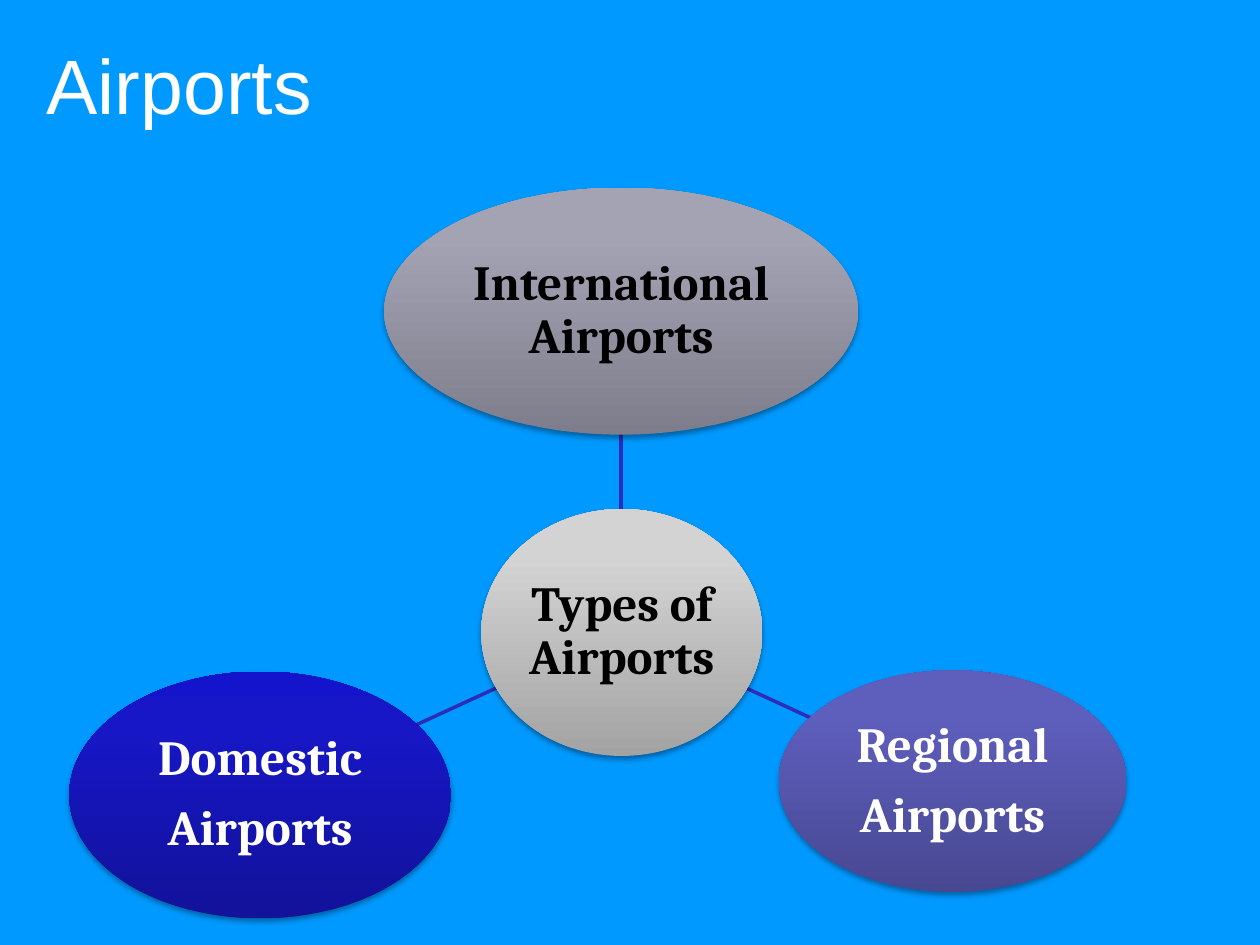
from copy import deepcopy

from lxml.etree import SubElement
from pptx import Presentation
from pptx.dml.color import RGBColor
from pptx.enum.shapes import MSO_CONNECTOR, MSO_SHAPE
from pptx.enum.text import MSO_ANCHOR, PP_ALIGN
from pptx.oxml.ns import qn
from pptx.util import Inches, Pt

THEME = {
    "background": "0099FF",
    "line": "2D2DB9",
    "shadow": "000000",
    "light": "FFFFFF",
    "dark": "000000",
    "title_font": "Arial",
    "label_font": "Cambria",
    "title_size": 44,
    "label_size": 28,
    "line_width": 2,
}
TITLE = "Airports"
GRADIENT_POSITIONS = (0, 0.8, 1)
NODES = [
    {"label": "Types of Airports", "box": (3.82, 4.04, 2.23, 1.96),
     "stops": ("A3A3A3", "D3D3D3", "D4D4D4"), "text": "dark"},
    {"label": "International Airports", "box": (3.05, 1.49, 3.76, 1.96),
     "stops": ("7D7D8B", "A3A3B4", "A3A3B6"), "text": "dark"},
    {"label": "Regional\nAirports", "box": (6.18, 5.32, 2.76, 1.76),
     "stops": ("484892", "5E5EBD", "5C5CC0"), "text": "light"},
    {"label": "Domestic\nAirports", "box": (0.55, 5.33, 3.03, 1.96),
     "stops": ("12129A", "1717C8", "1414CC"), "text": "light"},
]
SPOKES = [
    (4.93, 4.04, 4.93, 3.44),
    (5.92, 5.46, 6.44, 5.7),
    (3.94, 5.46, 3.31, 5.75),
]


def color(name):
    return RGBColor.from_string(THEME[name])


def format_text(paragraph, kind, color_name, alignment):
    paragraph.alignment = alignment
    for run in paragraph.runs:
        run.font.name = THEME[f"{kind}_font"]
        run.font.size = Pt(THEME[f"{kind}_size"])
        run.font.bold = kind == "label"
        run.font.color.rgb = color(color_name)


def fill_gradient(shape, stop_colors):
    shape.fill.gradient()
    shape.fill.gradient_angle = 90
    stop_list = shape.fill._fill._gradFill.find(qn("a:gsLst"))
    stop_list.append(deepcopy(stop_list[-1]))
    for stop, position, value in zip(shape.fill.gradient_stops, GRADIENT_POSITIONS, stop_colors):
        stop.position = position
        stop.color.rgb = RGBColor.from_string(value)


def add_shadow(shape):
    shape.shadow.inherit = False
    effects = shape._element.spPr.find(qn("a:effectLst"))
    shadow = SubElement(effects, qn("a:outerShdw"), blurRad=str(Pt(3.1)),
                        dist=str(Pt(1.8)), dir="5400000", rotWithShape="0")
    shade = SubElement(shadow, qn("a:srgbClr"), val=THEME["shadow"])
    SubElement(shade, qn("a:alpha"), val="35000")


def add_node(slide, node):
    shape = slide.shapes.add_shape(MSO_SHAPE.OVAL, *map(Inches, node["box"]))
    fill_gradient(shape, node["stops"])
    shape.line.fill.background()
    add_shadow(shape)
    frame = shape.text_frame
    frame.text = node["label"]
    frame.word_wrap = True
    frame.vertical_anchor = MSO_ANCHOR.MIDDLE
    frame.margin_left = frame.margin_right = Inches(0.02)
    frame.margin_top = frame.margin_bottom = Inches(0.02)
    for paragraph in frame.paragraphs:
        paragraph.line_spacing = 0.9
        paragraph.space_after = Pt(0.35 * THEME["label_size"])
        format_text(paragraph, "label", node["text"], PP_ALIGN.CENTER)


def add_spoke(slide, ends):
    connector = slide.shapes.add_connector(MSO_CONNECTOR.STRAIGHT, *map(Inches, ends))
    connector.line.color.rgb = color("line")
    connector.line.width = Pt(THEME["line_width"])
    SubElement(connector._element.spPr, qn("a:effectLst"))


def main():
    presentation = Presentation()
    presentation.slide_width, presentation.slide_height = Inches(10), Inches(7.5)
    slide = presentation.slides.add_slide(presentation.slide_layouts[5])
    slide.background.fill.solid()
    slide.background.fill.fore_color.rgb = color("background")

    title = slide.shapes.title
    title.left, title.top, title.width, title.height = map(Inches, (0.27, 0.13, 9.45, 0.95))
    title.text_frame.text = TITLE
    title.text_frame.vertical_anchor = MSO_ANCHOR.BOTTOM
    format_text(title.text_frame.paragraphs[0], "title", "light", PP_ALIGN.LEFT)

    for ends in SPOKES:
        add_spoke(slide, ends)
    for node in NODES:
        add_node(slide, node)
    presentation.save("out.pptx")


if __name__ == "__main__":
    main()
